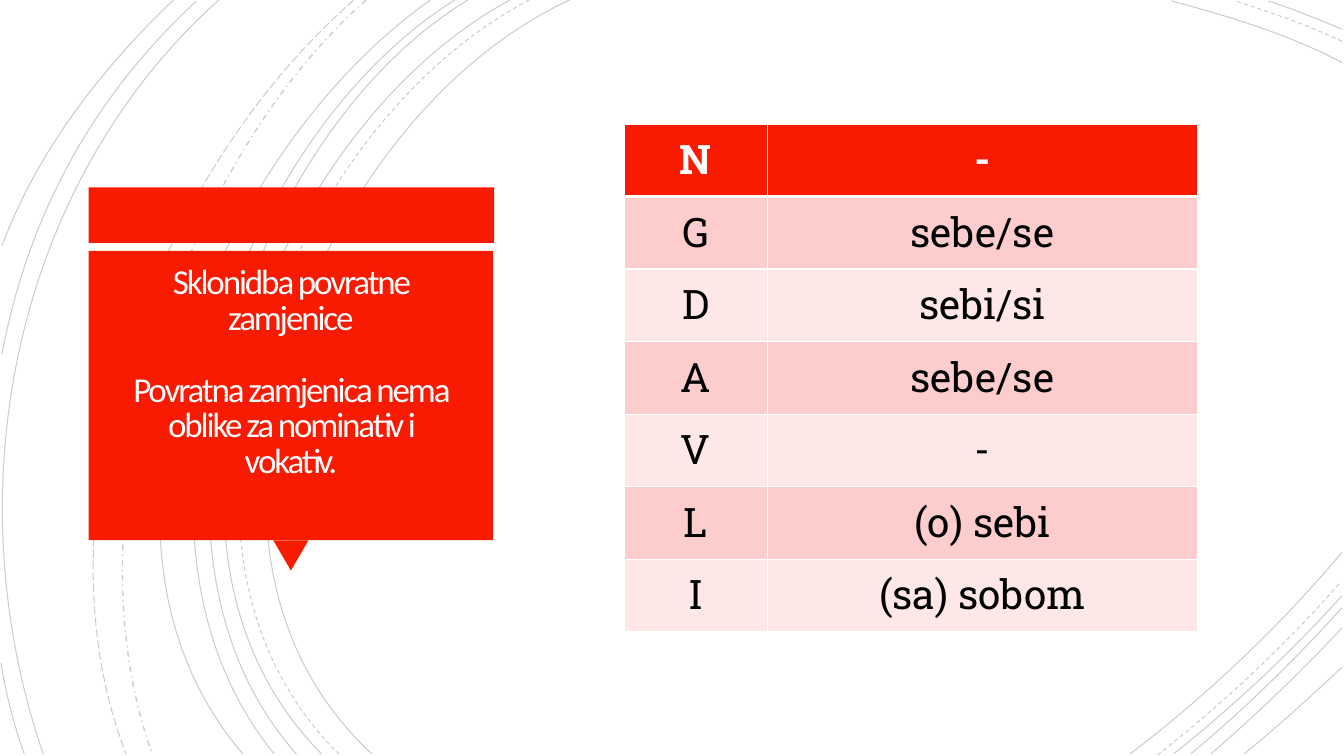
"""Build the slide on the declension of the reflexive pronoun."""
from dataclasses import dataclass

import pptx
import pptx.dml.color
import pptx.enum.dml
import pptx.enum.shapes
import pptx.enum.text
import pptx.oxml
import pptx.oxml.ns
import pptx.util
from pptx.util import Inches

DASH = pptx.enum.dml.MSO_LINE
SHAPE = pptx.enum.shapes.MSO_SHAPE
CENTER = pptx.enum.text.PP_ALIGN.CENTER
MIDDLE = pptx.enum.text.MSO_ANCHOR.MIDDLE


@dataclass(frozen=True)
class Theme:
    """Colours, fonts and type sizes of the slide."""
    accent: str = "F81B02"
    band_dark: str = "FCCDCC"
    band_light: str = "FEE8E7"
    title_text: str = "FFFEFF"
    white: str = "FFFFFF"
    black: str = "000000"
    title_font: str = "Calibri"
    table_font: str = "Roboto Slab"
    title_size: int = 25
    table_size: int = 29
    arc_alpha: int = 20


THEME = Theme()

ARCS = [
    (DASH.SOLID, 0.75, [
        (5.65, 0, 3.15, 1.15, 1.43, 5.4, 3.69, 7.48),
        (13.31, 0.62, 12.78, 0.34, 12.18, 0.16, 11.62, 0.01),
        (11.21, 7.48, 11.97, 6.9, 12.69, 6.22, 13.31, 5.48),
        (5.06, 0, 2.7, 1.27, 1.1, 5.37, 3.19, 7.48),
        (13.31, 0.29, 13.07, 0.19, 12.83, 0.09, 12.58, 0.01),
        (11.64, 7.48, 12.23, 7.01, 12.8, 6.48, 13.31, 5.91),
        (4.64, 0, 2.44, 1.33, 1.1, 5.41, 2.94, 7.48),
        (11.81, 7.48, 12.34, 7.04, 12.84, 6.55, 13.31, 6.03),
        (4.51, 0, 2.31, 1.38, 0.97, 5.33, 2.72, 7.48),
        (12.01, 7.48, 12.46, 7.09, 12.9, 6.67, 13.31, 6.23),
        (4.27, 0, 2.17, 1.47, 0.53, 5.29, 2.41, 7.48),
        (12.34, 7.48, 12.67, 7.21, 12.99, 6.92, 13.31, 6.62),
        (2.17, 0, 0.11, 1.85, -0.46, 4.9, 0.43, 7.48),
        (1.95, 0.01, 0.92, 0.96, 0.28, 2.14, 0.02, 3.51),
        (0.01, 6.58, 0.06, 6.89, 0.14, 7.19, 0.24, 7.48),
        (1.72, 0, 1, 0.69, 0.37, 1.5, 0.02, 2.44),
    ]),
    (DASH.DASH, 0.75, [
        (5.25, 0, 2.85, 1.25, 1.23, 5.37, 3.36, 7.48),
        (13.31, 0.41, 12.97, 0.25, 12.6, 0.12, 12.25, 0.01),
        (11.48, 7.49, 12.13, 6.98, 12.75, 6.4, 13.3, 5.77),
    ]),
    (DASH.DASH_DOT, 1, [(3.63, 0, 1.76, 1.66, 0.65, 5.09, 1.51, 7.48)]),
    (DASH.LONG_DASH, 0.75, [(3.51, 0, 1.57, 1.69, 0.29, 4.99, 1.25, 7.48)]),
]

PANEL = [
    (SHAPE.RECTANGLE, (0.88, 1.86, 4.02, 0.55), 0),
    (SHAPE.ISOSCELES_TRIANGLE, (2.71, 5.36, 0.35, 0.3), 180),
    (SHAPE.RECTANGLE, (0.88, 2.49, 4.01, 2.87), 0),
]

TITLE = [
    "Sklonidba povratne zamjenice",
    "Povratna zamjenica nema oblike za nominativ i vokativ.",
]

CASES = [
    ("N", "-"),
    ("G", "sebe/se"),
    ("D", "sebi/si"),
    ("A", "sebe/se"),
    ("V", "-"),
    ("L", "(o) sebi"),
    ("I", "(sa) sobom"),
]


def color(value):
    """Return an RGB colour from its hex text."""
    return pptx.dml.color.RGBColor.from_string(value)


def format_font(font, name, size, value, bold=False):
    """Set the face, size, colour and weight of a font."""
    font.name = name
    font.size = pptx.util.Pt(size)
    font.color.rgb = color(value)
    font.bold = bold


def bend(arc):
    """Turn the three segments of an outline into one cubic curve."""
    qn = pptx.oxml.ns.qn
    segments = list(arc.element.iter(qn("a:lnTo")))
    outline = segments[0].getparent()
    cubic = outline.makeelement(qn("a:cubicBezTo"), {})
    for segment in segments:
        cubic.append(segment[0])
        outline.remove(segment)
    outline.append(cubic)


def add_arc(page, curve, dash, width):
    """Draw one faint background arc."""
    points = list(zip(map(Inches, curve[::2]), map(Inches, curve[1::2])))
    builder = page.shapes.build_freeform(*points[0])
    builder.add_line_segments(points[1:], close=False)
    arc = builder.convert_to_shape()
    bend(arc)
    arc.shadow.inherit = False
    arc.fill.background()
    arc.line.width = pptx.util.Pt(width)
    arc.line.color.rgb = color(THEME.black)
    arc.line.dash_style = dash
    for ink in arc.element.iter(pptx.oxml.ns.qn("a:srgbClr")):
        alpha = ink.makeelement(pptx.oxml.ns.qn("a:alpha"), {"val": str(THEME.arc_alpha * 1000)})
        ink.append(alpha)


def add_panel_part(page, kind, place, rotation):
    """Draw one solid part of the title panel."""
    part = page.shapes.add_shape(kind, *map(Inches, place))
    part.rotation = rotation
    part.shadow.inherit = False
    part.fill.solid()
    part.fill.fore_color.rgb = color(THEME.accent)
    part.line.fill.background()


def fill_title(title):
    """Place the title above the panel and format its paragraphs."""
    title.element.getparent().append(title.element)
    title.left, title.top, title.width, title.height = map(Inches, (0.97, 2.57, 3.83, 2.69))
    frame = title.text_frame
    frame.text = "\n".join(TITLE)
    frame.word_wrap = True
    frame.auto_size = pptx.enum.text.MSO_AUTO_SIZE.NONE
    frame.vertical_anchor = MIDDLE
    frame.margin_left = frame.margin_right = Inches(0.25)
    frame.margin_top, frame.margin_bottom = Inches(0.05), Inches(0.47)
    for index, para in enumerate(frame.paragraphs):
        para.alignment = CENTER
        para.line_spacing = 0.85
        para.space_before = pptx.util.Pt(25.5 if index else 0)
        for span in para.runs:
            format_font(span.font, THEME.title_font, THEME.title_size, THEME.title_text)
            span.font._element.set("spc", "-150")


def add_borders(cell, row):
    """Give a cell white borders, thicker below the header row."""
    widths = {"lnL": 1, "lnR": 1, "lnT": 3 if row == 1 else 1, "lnB": 3 if row == 0 else 1}
    for side, width in widths.items():
        cell._tc.get_or_add_tcPr().append(pptx.oxml.parse_xml(
            f'<a:{side} {pptx.oxml.ns.nsdecls("a")} w="{pptx.util.Pt(width)}"><a:solidFill>'
            f'<a:srgbClr val="{THEME.white}"/></a:solidFill></a:{side}>'))


def format_cell(cell, text, row):
    """Fill one table cell according to its row."""
    band = THEME.band_dark if row % 2 else THEME.band_light
    add_borders(cell, row)
    cell.fill.solid()
    cell.fill.fore_color.rgb = color(band if row else THEME.accent)
    cell.margin_left = cell.margin_right = Inches(0.16)
    cell.margin_top = cell.margin_bottom = Inches(0.08)
    cell.text = text
    para = cell.text_frame.paragraphs[0]
    para.alignment = CENTER
    ink = THEME.black if row else THEME.white
    format_font(para.runs[0].font, THEME.table_font, THEME.table_size, ink, row == 0)


def add_case_table(page):
    """Add the table of cases and pronoun forms."""
    place = map(Inches, (6.19, 1.23, 5.69, 0.72 * len(CASES)))
    table = page.shapes.add_table(len(CASES), 2, *place).table
    for column, width in zip(table.columns, (1.42, 4.27)):
        column.width = Inches(width)
    for row, texts in enumerate(CASES):
        for column, text in enumerate(texts):
            format_cell(table.cell(row, column), text, row)


def main():
    """Build and save the deck."""
    deck = pptx.Presentation()
    deck.slide_width, deck.slide_height = Inches(13.33), Inches(7.5)
    page = deck.slides.add_slide(deck.slide_layouts[5])
    for dash, width, curves in ARCS:
        for curve in curves:
            add_arc(page, curve, dash, width)
    for part in PANEL:
        add_panel_part(page, *part)
    fill_title(page.shapes.title)
    add_case_table(page)
    deck.save("out.pptx")


if __name__ == "__main__":
    main()
